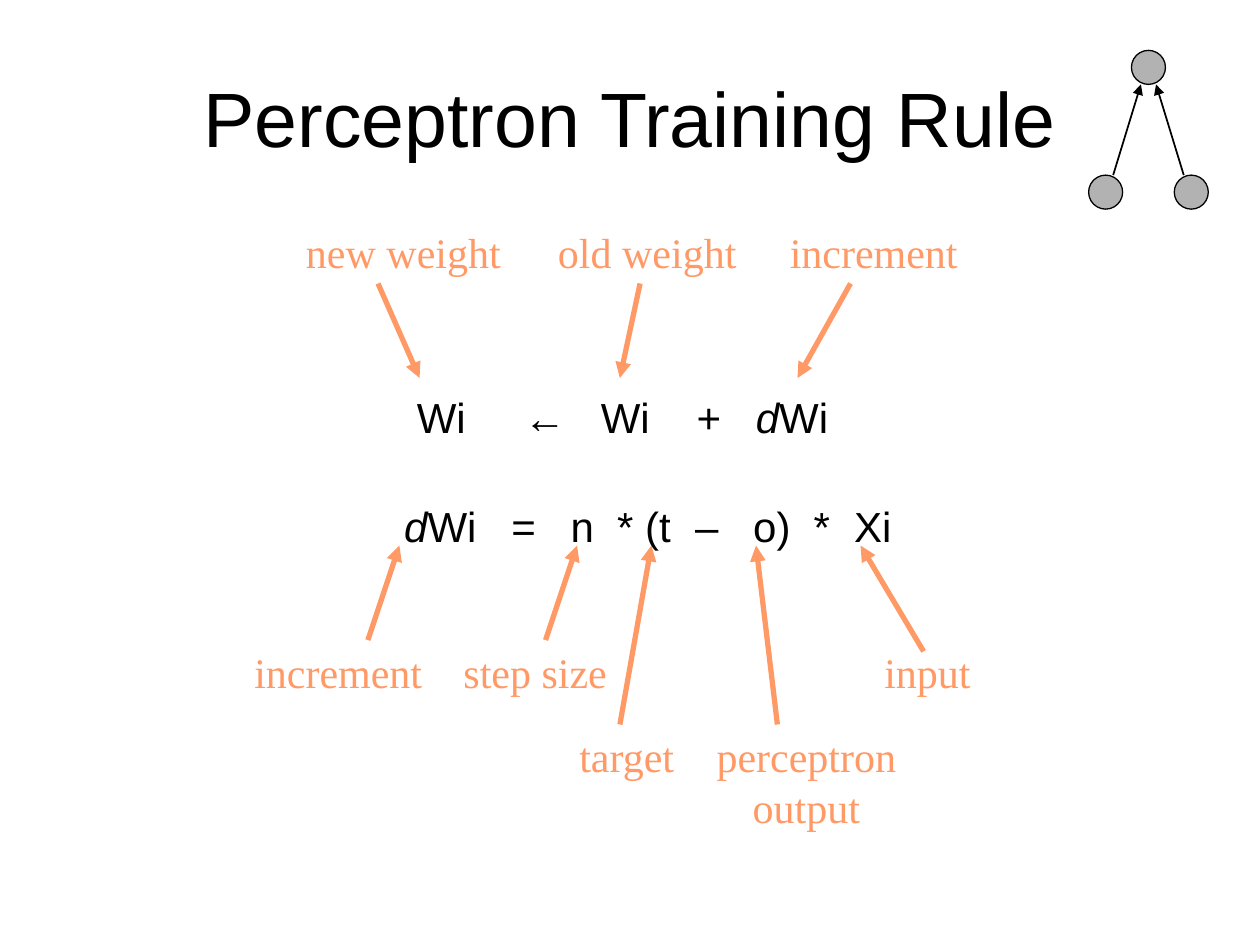
from pptx import Presentation
from pptx.dml.color import RGBColor
from pptx.enum.shapes import MSO_CONNECTOR as Link, MSO_SHAPE as Kind
from pptx.enum.text import MSO_ANCHOR as Anchor, PP_ALIGN as Align
from pptx.oxml.ns import qn
from pptx.util import Inches, Pt
from lxml.etree import SubElement

BLACK, GREY, PEACH = "000000", "B2B2B2", "FF9966"


def color(code):
    return RGBColor.from_string(code)


def add_text(slide, box, text, size=24, font="Arial", ink=BLACK, align=Align.LEFT,
             anchor=Anchor.TOP, wrap=True, tabs=()):
    """Lines split at newlines; text between underscores is italic."""
    frame = slide.shapes.add_textbox(*map(Inches, box)).text_frame
    frame.word_wrap = wrap
    frame.vertical_anchor = anchor
    for n, line in enumerate(text.split("\n")):
        para = frame.add_paragraph() if n else frame.paragraphs[0]
        para.alignment = align
        if tabs:
            stops = SubElement(para._p.get_or_add_pPr(), qn("a:tabLst"))
            for pos in tabs:
                SubElement(stops, qn("a:tab"), pos=str(Inches(pos)), algn="l")
        for i, part in enumerate(line.split("_")):
            if part:
                run = para.add_run()
                run.text = part
                run.font.size = Pt(size)
                run.font.name = font
                run.font.italic = i % 2 == 1
                run.font.color.rgb = color(ink)


def add_arrow(slide, start, end, ink, width):
    line = slide.shapes.add_connector(Link.STRAIGHT, *map(Inches, (*start, *end)))
    line.line.color.rgb = color(ink)
    line.line.width = Pt(width)
    SubElement(line.line._get_or_add_ln(), qn("a:tailEnd"), type="triangle")
    SubElement(line._element.spPr, qn("a:effectLst"))


def add_labels(slide, left, top, labels):
    """Each label: text, box, arrow start and arrow end, from the region's corner."""
    for text, (x, y, w, h), (x1, y1), (x2, y2) in labels:
        add_text(slide, (left + x, top + y, w, h), text, font="Times New Roman",
                 ink=PEACH, wrap=False,
                 align=Align.CENTER if "\n" in text else Align.LEFT)
        add_arrow(slide, (left + x1, top + y1), (left + x2, top + y2), PEACH, 3)


def add_net(slide, left, top):
    """Two input nodes feeding one output node."""
    size, drop, step = 0.27, 0.99, 0.34
    mid = left + step + size / 2
    for x, y in ((0, drop), (step, 0), (2 * step, drop)):
        node = slide.shapes.add_shape(
            Kind.OVAL, *map(Inches, (left + x, top + y, size, size)))
        node.shadow.inherit = False
        node.fill.solid()
        node.fill.fore_color.rgb = color(GREY)
        node.line.color.rgb = color(BLACK)
        node.line.width = Pt(0.75)
    for side in (-1, 1):
        add_arrow(slide, (mid + side * 0.28, top + drop),
                  (mid + side * 0.06, top + size), BLACK, 1)


def add_rules(slide, left, top):
    """The update rule and, below it, the increment rule."""
    add_text(slide, (left + 0.1, top, 4.59, 0.5), "Wi\t←\tWi\t+\t_d_Wi",
             tabs=(0.85, 1.46, 2.22, 2.69))
    add_text(slide, (left, top + 0.86, 4.8, 0.5),
             "_d_Wi\t=\tn\t* (t\t–\to)\t*\tXi",
             tabs=(0.85, 1.32, 1.69, 2.31, 2.77, 3.25, 3.57))


# Labels above the update rule
UPPER = [
    ("new weight", (0, 0, 1.75, 0.5), (0.67, 0.5), (1, 1.25)),
    ("old weight", (2, 0, 1.62, 0.5), (2.75, 0.5), (2.59, 1.25)),
    ("increment", (3.84, 0, 1.53, 0.5), (4.42, 0.5), (4, 1.25)),
]
# Labels below the increment rule
LOWER = [
    ("increment", (0, 0.75, 1.53, 0.5), (1, 0.75), (1.25, 0)),
    ("step size", (1.66, 0.75, 1.34, 0.5), (2.41, 0.75), (2.66, 0)),
    ("target", (2.58, 1.42, 0.96, 0.5), (3, 1.42), (3.25, 0)),
    ("perceptron\noutput", (3.63, 1.42, 1.7, 0.9), (4.25, 1.42), (4.08, 0)),
    ("input", (5, 0.75, 0.89, 0.5), (5.41, 0.84), (4.91, 0)),
]


def main():
    deck = Presentation()
    deck.slide_width, deck.slide_height = Inches(10), Inches(7.5)
    slide = deck.slides.add_slide(deck.slide_layouts[6])
    add_text(slide, (0.5, 0.3, 9, 1.25), "Perceptron Training Rule", size=44,
             align=Align.CENTER, anchor=Anchor.MIDDLE)
    add_labels(slide, 1.92, 4.33, LOWER)
    add_labels(slide, 2.33, 1.75, UPPER)
    add_net(slide, 8.64, 0.4)
    add_rules(slide, 3.11, 3.06)
    deck.save("out.pptx")


if __name__ == "__main__":
    main()
